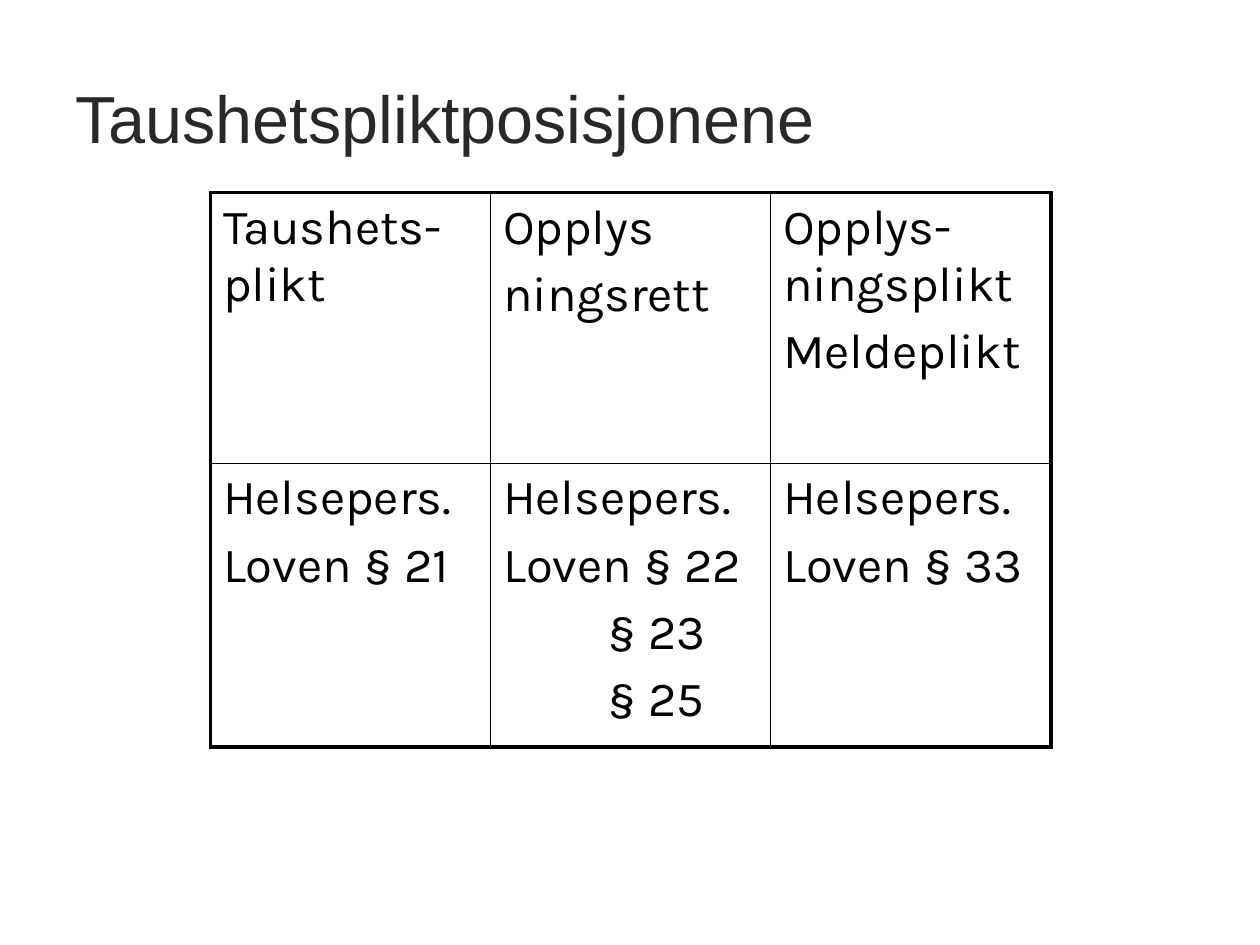
from lxml.etree import SubElement
from pptx import Presentation
from pptx.dml.color import RGBColor
from pptx.enum.text import MSO_ANCHOR
from pptx.oxml.ns import qn
from pptx.util import Inches, Pt

COLORS = {"title": "292929", "text": "000000", "border": "000000"}
OUTER_BORDER = 2.25
INNER_BORDER = 1
INDENTED = {"§ 23", "§ 25"}
ROWS = [
    ["Taushets-plikt", "Opplys\nningsrett", "Opplys-ningsplikt\nMeldeplikt"],
    [
        "Helsepers.\nLoven § 21",
        "Helsepers.\nLoven § 22\n§ 23\n§ 25",
        "Helsepers.\nLoven § 33",
    ],
]


class SlideBuilder:
    title_font = "Arial"
    body_font = "Karla"
    title_size = 38
    body_size = 28

    def __init__(self, slide):
        self.slide = slide

    def format_font(self, paragraph, name, size, color):
        for run in paragraph.runs:
            run.font.name = name
            run.font.size = Pt(size)
            run.font.color.rgb = RGBColor.from_string(COLORS[color])

    def add_title(self, text, left, top, width, height):
        shape = self.slide.shapes.add_textbox(
            Inches(left), Inches(top), Inches(width), Inches(height)
        )
        text_frame = shape.text_frame
        text_frame.word_wrap = True
        text_frame.vertical_anchor = MSO_ANCHOR.MIDDLE
        text_frame.text = text
        self.format_font(
            text_frame.paragraphs[0], self.title_font, self.title_size, "title"
        )

    def add_border(self, cell, side, width):
        line = SubElement(
            cell._tc.get_or_add_tcPr(), qn(f"a:ln{side}"), w=str(Pt(width))
        )
        fill = SubElement(line, qn("a:solidFill"))
        SubElement(fill, qn("a:srgbClr"), val=COLORS["border"])

    def fill_cell(self, cell, text):
        cell.text_frame.text = text
        for index, paragraph in enumerate(cell.text_frame.paragraphs):
            if index:
                paragraph.space_before = Pt(self.body_size * 0.2)
            if paragraph.text in INDENTED:
                paragraph._p.get_or_add_pPr().set("marL", str(Inches(0.83)))
            self.format_font(paragraph, self.body_font, self.body_size, "text")

    def add_table(self, rows, left, top, width, row_heights):
        row_count, column_count = len(rows), len(rows[0])
        table = self.slide.shapes.add_table(
            row_count, column_count, Inches(left), Inches(top),
            Inches(width), Inches(sum(row_heights)),
        ).table
        table.first_row = False
        table.horz_banding = False
        for row_index, texts in enumerate(rows):
            table.rows[row_index].height = Inches(row_heights[row_index])
            for column_index, text in enumerate(texts):
                cell = table.cell(row_index, column_index)
                self.fill_cell(cell, text)
                outer_sides = {
                    "L": column_index == 0,
                    "R": column_index == column_count - 1,
                    "T": row_index == 0,
                    "B": row_index == row_count - 1,
                }
                for side, is_outer in outer_sides.items():
                    self.add_border(
                        cell, side, OUTER_BORDER if is_outer else INNER_BORDER
                    )
                cell.fill.background()


def main():
    presentation = Presentation()
    presentation.slide_width = Inches(10)
    presentation.slide_height = Inches(7.5)
    slide = presentation.slides.add_slide(presentation.slide_layouts[6])
    builder = SlideBuilder(slide)
    builder.add_title("Taushetspliktposisjonene", 0.5, 0.3, 9, 1.25)
    builder.add_table(ROWS, 1.67, 1.53, 6.67, [2.15, 2.25])
    presentation.save("out.pptx")


if __name__ == "__main__":
    main()
